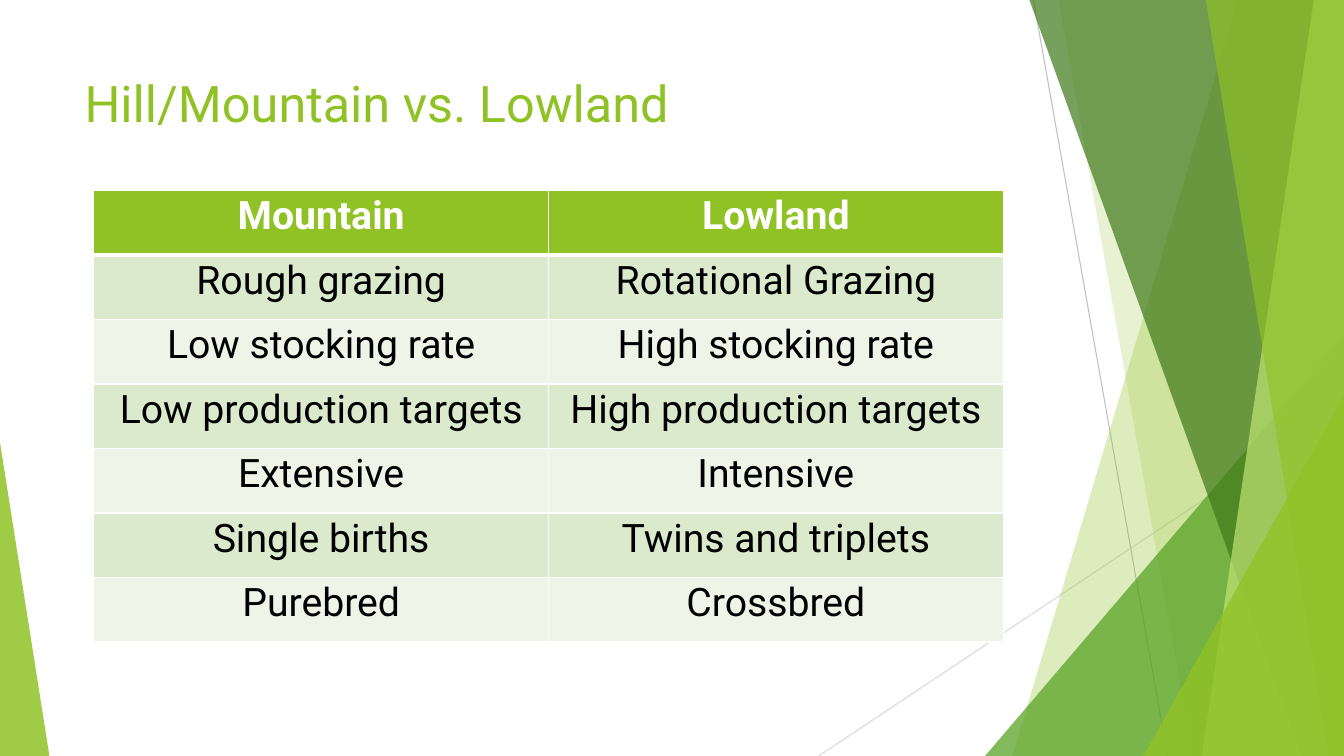
"""Build the slide that sets mountain against lowland in a table."""
from lxml.etree import SubElement
from pptx import Presentation
from pptx.dml.color import RGBColor
from pptx.enum.shapes import MSO_CONNECTOR, MSO_SHAPE
from pptx.enum.text import PP_ALIGN
from pptx.oxml.ns import qn
from pptx.util import Inches, Pt

TITLE = "Hill/Mountain vs. Lowland"
ROWS = [
    ("Mountain", "Lowland"),
    ("Rough grazing", "Rotational Grazing"),
    ("Low stocking rate", "High stocking rate"),
    ("Low production targets", "High production targets"),
    ("Extensive", "Intensive"),
    ("Single births", "Twins and triplets"),
    ("Purebred", "Crossbred"),
]

FONT = "Roboto"
WHITE = RGBColor(0xFF, 0xFF, 0xFF)
BLACK = RGBColor(0, 0, 0)
LIME = RGBColor(0x90, 0xC2, 0x26)
GREEN = RGBColor(0x54, 0xA0, 0x21)
DARK = RGBColor(0x3F, 0x78, 0x19)
PALE = RGBColor(0xC0, 0xE4, 0x74)
BANDS = [RGBColor(0xEE, 0xF4, 0xE8), RGBColor(0xDB, 0xE9, 0xCD)]
GREY = RGBColor(0xBF, 0xBF, 0xBF)
SILVER = RGBColor(0xD9, 0xD9, 0xD9)

WIDE, HIGH = 13.33, 7.5
LINES = [
    (10.25, 0, 11.58, HIGH, GREY),
    (WIDE, 4.03, 8.12, HIGH, SILVER),
]
PANES = [
    ((12.28, 10.04), LIME, 30),
    ((10.5, 11.83), LIME, 20),
    ((9.77, 3.33, 3.56, 1), GREEN, 72),
    ((10.21, 12.91), DARK, 70),
    ((13.03, 11.92), PALE, 70),
    ((11.96, 13.18), LIME, 65),
    ((11.34, 3.93, 1.99, 1), LIME, 80),
    ((0, 4.39, 0.49, 0), LIME, 85),
]


def add_line(shapes, x1, y1, x2, y2, color):
    line = shapes.add_connector(
        MSO_CONNECTOR.STRAIGHT, Inches(x1), Inches(y1), Inches(x2), Inches(y2))
    line.line.color.rgb = color
    line.line.width = Pt(0.75)
    SubElement(line._element.spPr, qn("a:effectLst"))


def add_pane(shapes, form, color, alpha):
    if len(form) == 2:
        top, base = form
        pen = shapes.build_freeform(Inches(top), 0)
        pen.add_line_segments(
            [(Inches(x), Inches(y))
             for x, y in [(WIDE, 0), (WIDE, HIGH), (base, HIGH)]])
        pane = pen.convert_to_shape()
    else:
        left, top, width, apex = form
        pane = shapes.add_shape(
            MSO_SHAPE.ISOSCELES_TRIANGLE, Inches(left), Inches(top),
            Inches(width), Inches(HIGH - top))
        pane.adjustments[0] = apex
    pane.shadow.inherit = False
    pane.line.fill.background()
    pane.fill.solid()
    pane.fill.fore_color.rgb = color
    tint = pane._element.spPr.find(qn("a:solidFill"))[0]
    SubElement(tint, qn("a:alpha"), val=str(alpha * 1000))


def style(para, size, color, bold=False):
    font = para.font
    font.name, font.size, font.bold = FONT, Pt(size), bold
    font.color.rgb = color


def add_edges(cell, top, base):
    props = cell._tc.get_or_add_tcPr()
    sides = [("lnL", 1), ("lnR", 1), ("lnT", top), ("lnB", base)]
    for spot, (side, width) in enumerate(sides):
        edge = props.makeelement(qn("a:" + side), {"w": str(Pt(width))})
        fill = SubElement(edge, qn("a:solidFill"))
        SubElement(fill, qn("a:srgbClr"), val=str(WHITE))
        props.insert(spot, edge)


def add_grid(shapes):
    grid = shapes.add_table(
        len(ROWS), len(ROWS[0]), Inches(0.93), Inches(1.89),
        Inches(9.02), Inches(0.64 * len(ROWS))).table
    for r, row in enumerate(ROWS):
        head = r == 0
        for c, text in enumerate(row):
            cell = grid.cell(r, c)
            cell.text = text
            cell.margin_left = cell.margin_right = Inches(0.07)
            cell.margin_top = cell.margin_bottom = 0
            cell.fill.solid()
            cell.fill.fore_color.rgb = LIME if head else BANDS[r % 2]
            add_edges(cell, 3 if r == 1 else 1, 3 if head else 1)
            para = cell.text_frame.paragraphs[0]
            para.alignment = PP_ALIGN.CENTER
            para.line_spacing = 1.07
            style(para, 28, WHITE if head else BLACK, head)


def main():
    deck = Presentation()
    deck.slide_width, deck.slide_height = Inches(WIDE), Inches(HIGH)
    shapes = deck.slides.add_slide(deck.slide_layouts[6]).shapes
    for line in LINES:
        add_line(shapes, *line)
    for pane in PANES:
        add_pane(shapes, *pane)
    frame = shapes.add_textbox(
        Inches(0.74), Inches(0.67), Inches(9.4), Inches(1.44)).text_frame
    frame.word_wrap = True
    frame.text = TITLE
    style(frame.paragraphs[0], 36, LIME)
    add_grid(shapes)
    deck.save("out.pptx")


if __name__ == "__main__":
    main()
